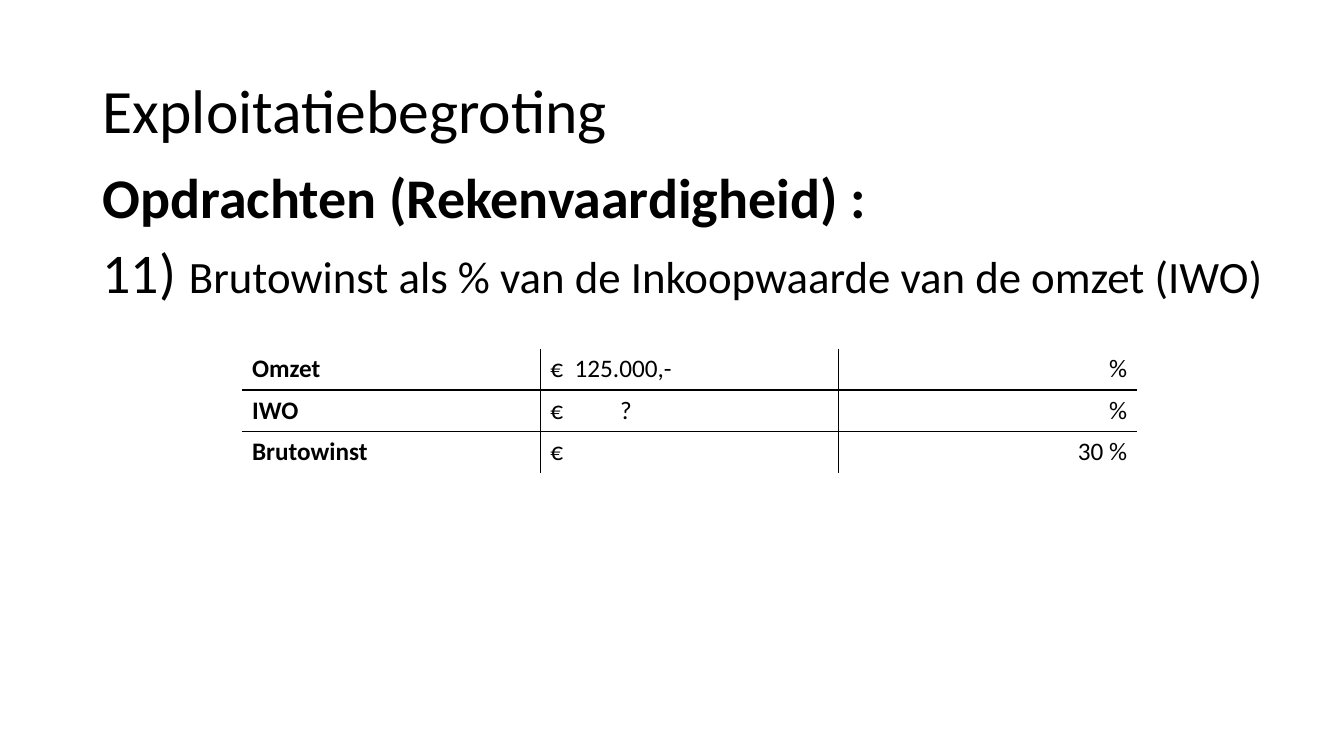
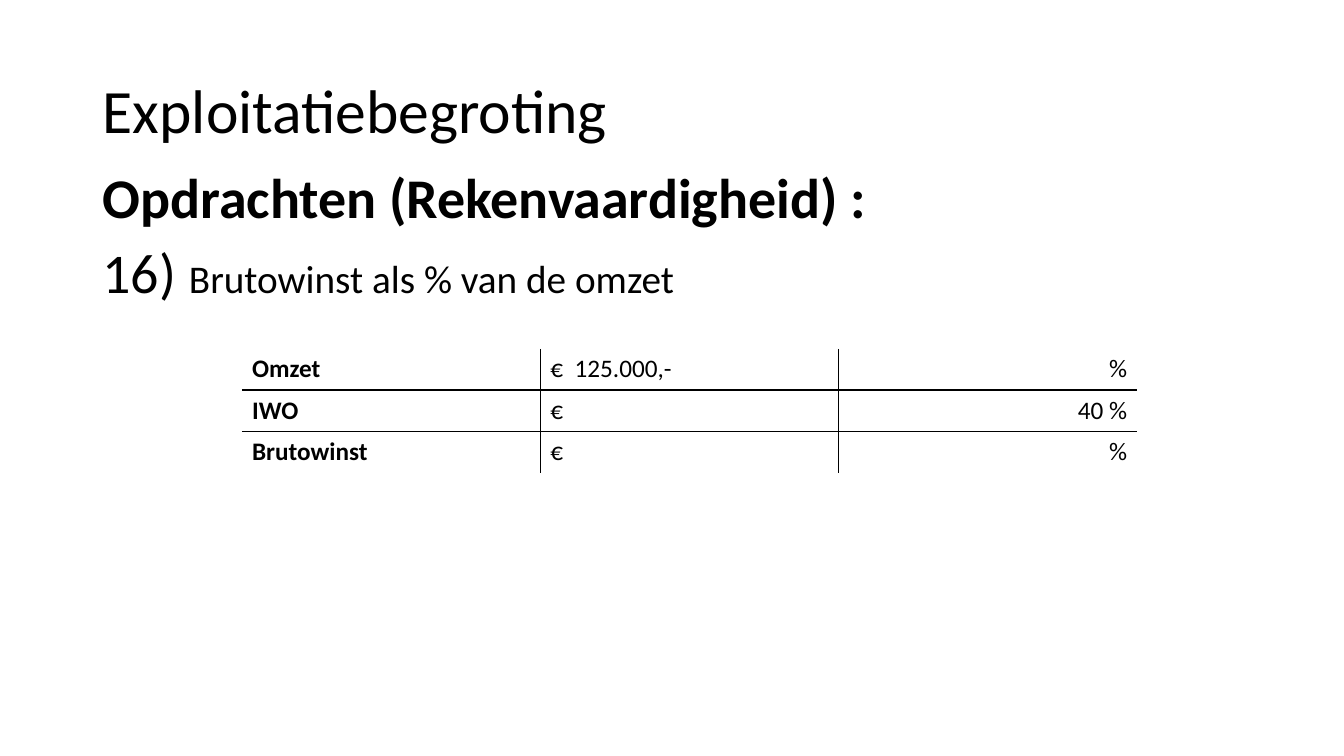
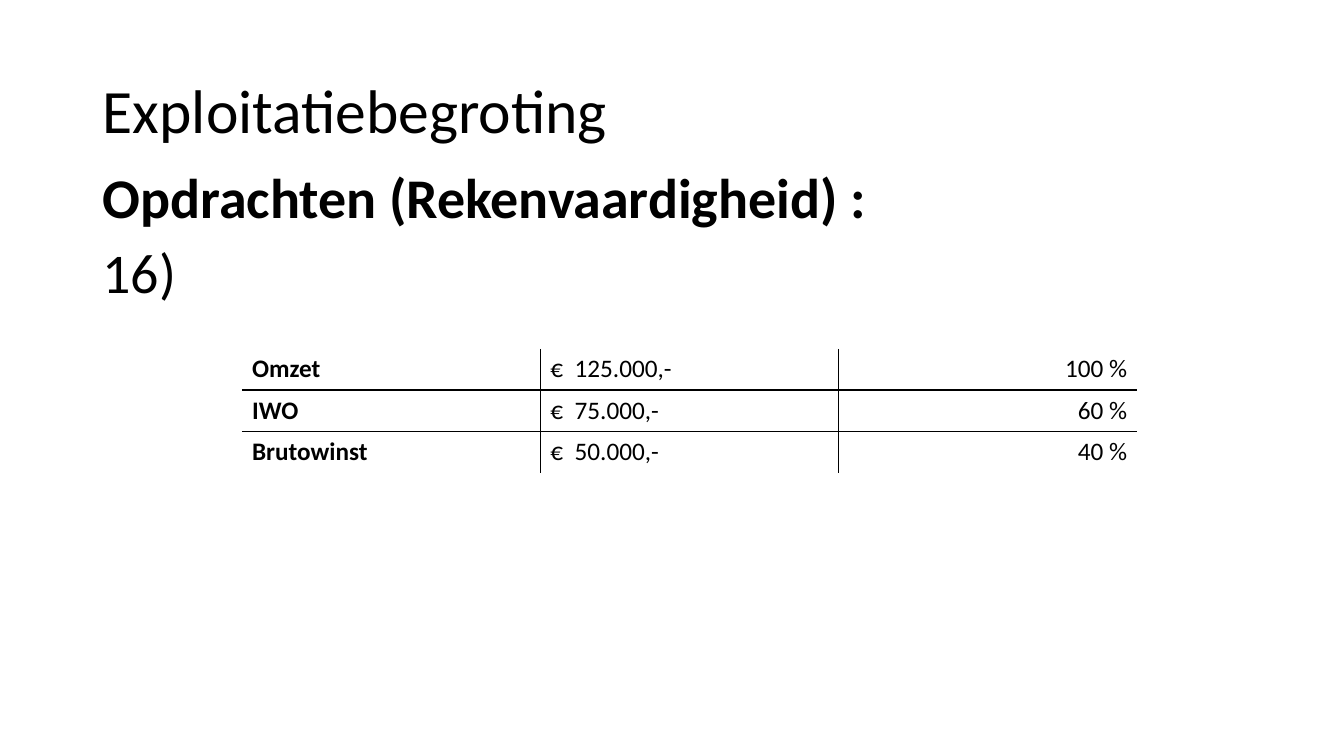
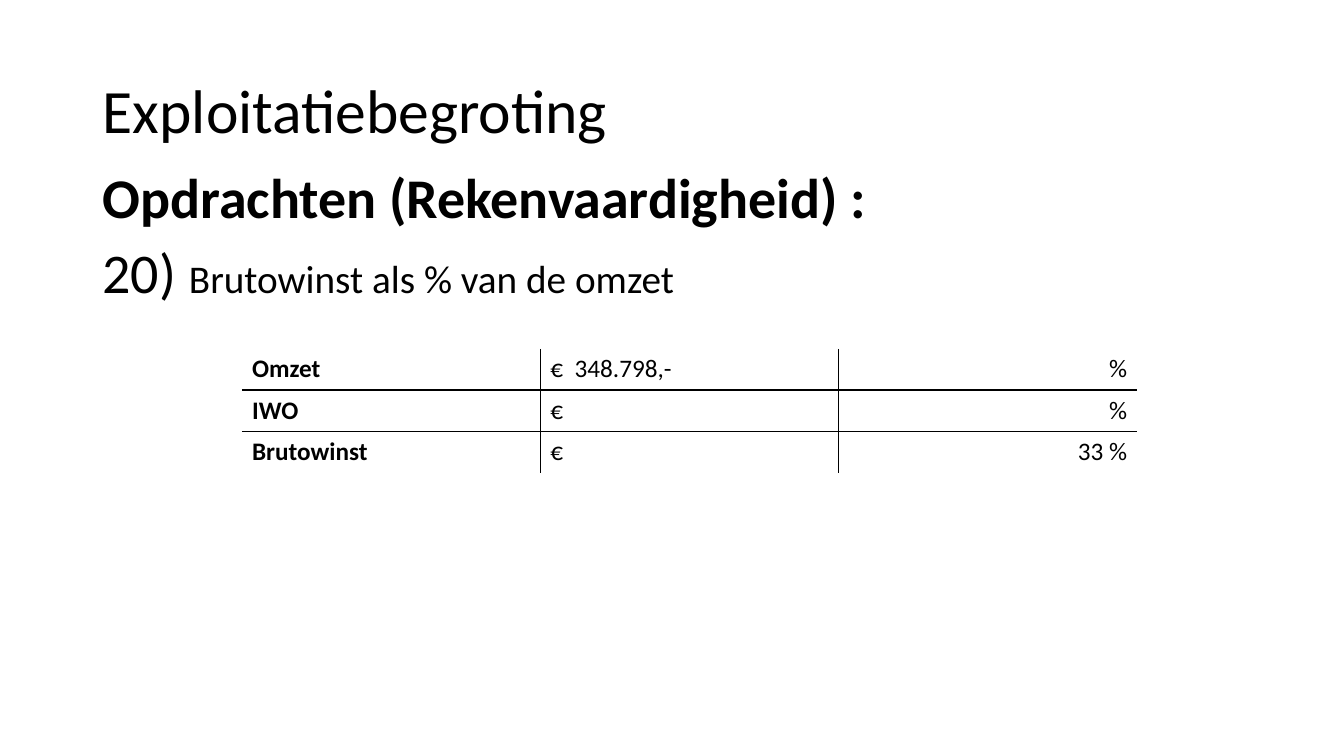
from dataclasses import dataclass
from lxml.etree import SubElement
from pptx import Presentation
from pptx.dml.color import RGBColor
from pptx.enum.text import MSO_ANCHOR, MSO_AUTO_SIZE, PP_ALIGN
from pptx.oxml import parse_xml
from pptx.oxml.ns import nsdecls, qn
from pptx.util import Inches, Pt


@dataclass(frozen=True)
class Theme:
    font: str = "Calibri"
    ink: RGBColor = RGBColor(0, 0, 0)
    title: int = 44
    heading: int = 40
    cell: int = 18
    rule: int = 1
    line_spacing: float = 0.9
    no_table_style: str = "{2D5ABB26-0587-4C30-8999-92F81FD0307C}"


theme = Theme()


def set_font(font, size, bold=False):
    font.name = theme.font
    font.size = Pt(size)
    font.bold = bold
    font.color.rgb = theme.ink


def draw_borders(cell, sides):
    cell_properties = cell._tc.get_or_add_tcPr()
    for position, side in enumerate(sides):
        cell_properties.insert(position, parse_xml(
            f'<a:{side} {nsdecls("a")} w="{Pt(theme.rule)}"><a:solidFill>'
            f'<a:srgbClr val="{theme.ink}"/></a:solidFill></a:{side}>'))


row_labels = ["Omzet", "IWO", "Brutowinst"]
amount_tabs = [Inches(0.24), Inches(0.69)]
column_width, row_height = Inches(2.96), Inches(0.41)

exercises = [
    ("11)", "Brutowinst als % van de Inkoopwaarde van de omzet (IWO)", 32,
     ["€\t125.000,-", "€\t\t?", "€"], ["%", "%", "30 %"]),
    ("16)", "Brutowinst als % van de omzet", 28,
     ["€\t125.000,-", "€", "€"], ["%", "40 %", "%"]),
    ("16)", "", 28,
     ["€\t125.000,-", "€\t75.000,-", "€\t50.000,-"], ["100 %", "60 %", "40 %"]),
    ("20)", "Brutowinst als % van de omzet", 28,
     ["€\t348.798,-", "€", "€"], ["%", "%", "33 %"]),
]

presentation = Presentation()
presentation.slide_width = Inches(13.33)
presentation.slide_height = Inches(7.5)

for number, question, question_size, amounts, percentages in exercises:
    slide = presentation.slides.add_slide(presentation.slide_layouts[5])

    title = slide.shapes.title
    title.left, title.top = Inches(0.92), Inches(0.4)
    title.width, title.height = Inches(11.5), Inches(1.45)
    title.text_frame.text = "Exploitatiebegroting"
    title.text_frame.auto_size = MSO_AUTO_SIZE.NONE
    title.text_frame.vertical_anchor = MSO_ANCHOR.MIDDLE
    title_line = title.text_frame.paragraphs[0]
    title_line.alignment = PP_ALIGN.LEFT
    title_line.line_spacing = theme.line_spacing
    set_font(title_line.font, theme.title)

    assignment = slide.shapes.add_textbox(
        Inches(0.92), Inches(1.64), Inches(12.23), Inches(1.6)).text_frame
    assignment.word_wrap = True
    heading = assignment.paragraphs[0]
    heading.text = "Opdrachten (Rekenvaardigheid) :"
    heading.line_spacing = theme.line_spacing
    set_font(heading.font, theme.heading, bold=True)

    task = assignment.add_paragraph()
    task.line_spacing = theme.line_spacing
    task.space_before = Pt(10)
    task_parts = [(number, theme.heading)]
    if question:
        task_parts = [(f"{number} ", theme.heading), (question, question_size)]
    for wording, size in task_parts:
        run = task.add_run()
        run.text = wording
        set_font(run.font, size)

    budget = slide.shapes.add_table(
        3, 3, Inches(2.4), Inches(3.46), column_width * 3, row_height * 3).table
    budget.first_row = False
    budget.horz_banding = False
    budget._tbl.tblPr.find(qn("a:tableStyleId")).text = theme.no_table_style
    for column in budget.columns:
        column.width = column_width
    for row in budget.rows:
        row.height = row_height

    for row_index, entries in enumerate(zip(row_labels, amounts, percentages)):
        for column_index, entry in enumerate(entries):
            cell = budget.cell(row_index, column_index)
            cell.fill.background()
            inner_sides = {"lnL": column_index > 0, "lnR": column_index < 2,
                           "lnT": row_index > 0, "lnB": row_index < 2}
            draw_borders(cell, [side for side, inner in inner_sides.items() if inner])
            paragraph = cell.text_frame.paragraphs[0]
            paragraph.text = entry
            if "\t" in entry:
                tab_list = SubElement(paragraph._p.get_or_add_pPr(), qn("a:tabLst"))
                for stop in amount_tabs:
                    SubElement(tab_list, qn("a:tab"), pos=str(stop), algn="l")
            if column_index == 2:
                paragraph.alignment = PP_ALIGN.RIGHT
            set_font(paragraph.font, theme.cell, bold=column_index == 0)

presentation.save("out.pptx")
